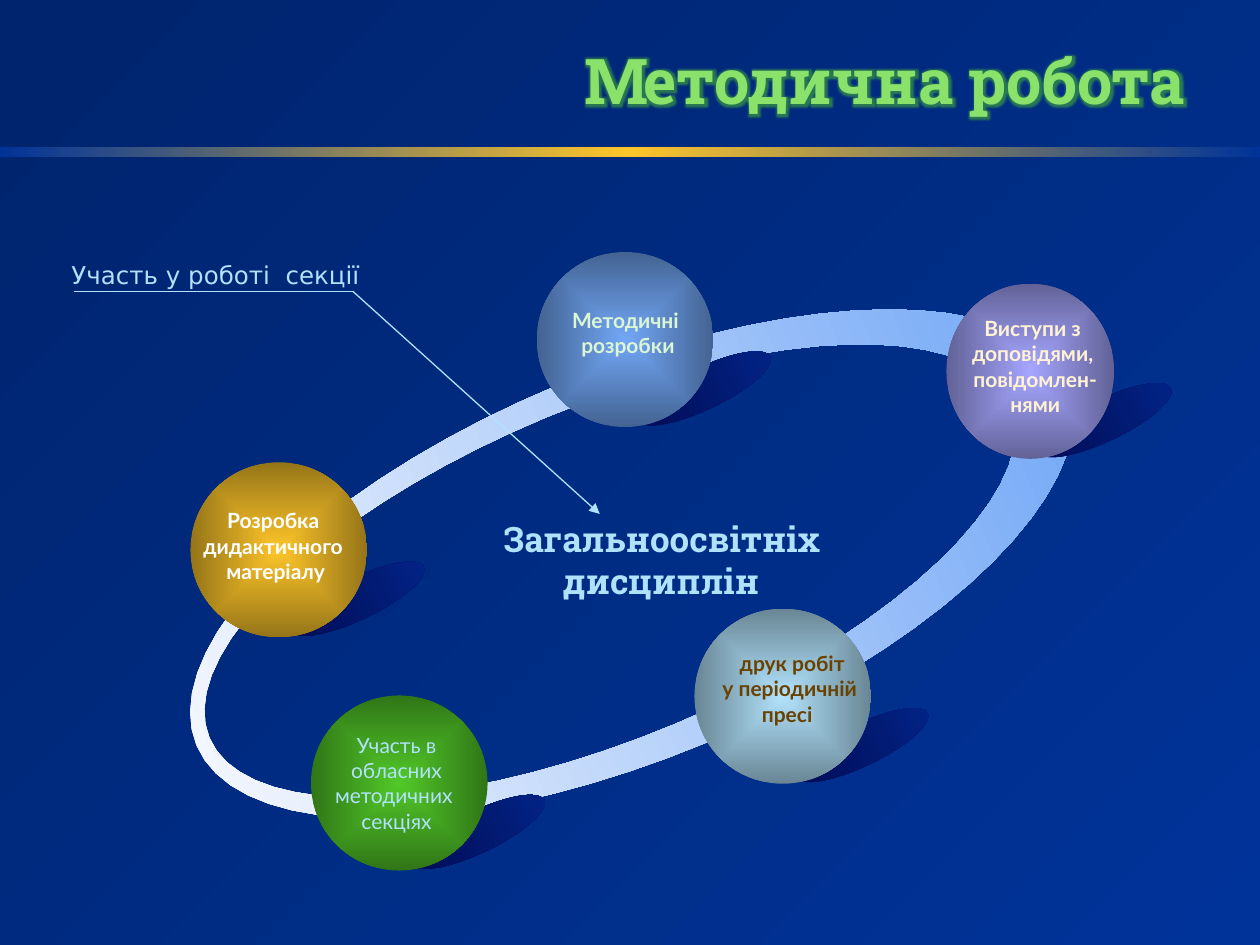
import math
from dataclasses import dataclass

import lxml.etree
import pptx
import pptx.dml.color
import pptx.enum.shapes
import pptx.enum.text
import pptx.oxml
import pptx.oxml.ns
import pptx.util

Cm = pptx.util.Cm
Pt = pptx.util.Pt
qn = pptx.oxml.ns.qn
RGB = pptx.dml.color.RGBColor.from_string
OVAL = pptx.enum.shapes.MSO_SHAPE.OVAL
RECTANGLE = pptx.enum.shapes.MSO_SHAPE.RECTANGLE
ALIGN = pptx.enum.text.PP_ALIGN
MIDDLE = pptx.enum.text.MSO_ANCHOR.MIDDLE


@dataclass(frozen=True)
class Theme:
    night: str = "00246D"
    blue: str = "003399"
    gold: str = "FDC529"
    green: str = "52C828"
    lime: str = "8AE26B"
    sky: str = "B1E2FB"
    azure: str = "72A7F6"
    violet: str = "A5A5FF"
    mist: str = "F6F8FE"
    shade_dark: str = "020A53"
    shade_light: str = "022589"
    white: str = "FFFFFF"
    mint: str = "DBF6D2"
    cream: str = "FFF3D4"
    brown: str = "694201"
    black: str = "000000"
    title_font: str = "Roboto Slab"
    label_font: str = "Lato"
    note_font: str = "DejaVu Sans"
    title_size: int = 36
    core_size: int = 20
    note_size: int = 14
    label_size: int = 12


@dataclass(frozen=True)
class Box:
    left: float
    top: float
    width: float
    height: float

    def area(self, left, top, width, height):
        return Box(self.left + left, self.top + top, width, height)

    def lengths(self):
        return [Cm(v) for v in (self.left, self.top, self.width, self.height)]


THEME = Theme()
SPHERES = [
    (Box(10.82, 5.08, 3.56, 3.53), THEME.azure, THEME.mint, True,
     (0.06, -0.14), ["Методичні ", "розробки"]),
    (Box(3.84, 9.32, 3.56, 3.53), THEME.gold, THEME.white, True,
     (-0.06, -0.08), ["Розробка ", "дидактичного ", "матеріалу"]),
    (Box(6.27, 14.02, 3.56, 3.53), THEME.green, THEME.sky, False,
     None, ["Участь в ", "обласних ", "методичних  ", "секціях "]),
    (Box(14, 12.27, 3.56, 3.53), THEME.sky, THEME.brown, True,
     (0.14, -0.15), [" друк робіт", " у періодичній ", "пресі "]),
    (Box(19.08, 5.72, 3.38, 3.53), THEME.violet, THEME.cream, True,
     (0.1, -0.1), ["Виступи з ", "доповідями, ", "повідомлен-", "нями"]),
]


def paint_gradient(fill, owner, colors, angle=0, edge_shade=None):
    fill.gradient()
    grad = owner.find(".//" + qn("a:gradFill"))
    grad.clear()
    grad.set("rotWithShape", "1")
    stops = lxml.etree.SubElement(grad, qn("a:gsLst"))
    for i, color in enumerate(colors):
        stop = lxml.etree.SubElement(stops, qn("a:gs"), pos=str(100000 * i // (len(colors) - 1)))
        tone = lxml.etree.SubElement(stop, qn("a:srgbClr"), val=color)
    if edge_shade:
        lxml.etree.SubElement(tone, qn("a:shade"), val=str(edge_shade))
        burst = lxml.etree.SubElement(grad, qn("a:path"), {"path": "shape"})
        lxml.etree.SubElement(burst, qn("a:fillToRect"), dict.fromkeys("ltrb", "50000"))
    else:
        lxml.etree.SubElement(grad, qn("a:lin"), ang=str(round(angle * 60000)), scaled="0")


def finish_shape(shape, colors, **options):
    shape.shadow.inherit = False
    shape.line.fill.background()
    paint_gradient(shape.fill, shape._element.spPr, colors, **options)


def write(frame, lines, font, size, color, bold=False, align=ALIGN.CENTER, wrap=False, anchor=None):
    frame.word_wrap = wrap
    if anchor is not None:
        frame.vertical_anchor = anchor
    for i, line in enumerate(lines):
        paragraph = frame.add_paragraph() if i else frame.paragraphs[0]
        paragraph.alignment = align
        run = paragraph.add_run()
        run.text = line
        run.font.name, run.font.size, run.font.bold = font, Pt(size), bold
        run.font.color.rgb = RGB(color)
    return run


def add_text_effect(run, kind, color, alpha=100, **settings):
    effects = pptx.oxml.parse_xml(f"<a:effectLst {pptx.oxml.ns.nsdecls('a')}/>")
    effect = lxml.etree.SubElement(effects, qn(kind), settings)
    tone = lxml.etree.SubElement(effect, qn("a:srgbClr"), val=color)
    lxml.etree.SubElement(tone, qn("a:alpha"), val=str(alpha * 1000))
    run.font._element.find(qn("a:solidFill")).addnext(effects)


def draw_heading(slide, box):
    divider = slide.shapes.add_shape(RECTANGLE, *box.area(0, 2.97, box.width, 0.2).lengths())
    finish_shape(divider, [THEME.blue, THEME.gold, THEME.blue])
    title = slide.shapes.add_textbox(*box.area(3.18, 0.81, 20.95, 1.57).lengths())
    run = write(title.text_frame, ["Методична робота"], THEME.title_font, THEME.title_size,
                THEME.lime, True, ALIGN.RIGHT, True, MIDDLE)
    add_text_effect(run, "a:glow", THEME.green, 50, rad=str(Pt(6)))


def ellipse_points(x, y, half_width, half_height, tilt, count=72):
    cos, sin = math.cos(math.radians(tilt)), math.sin(math.radians(tilt))
    for i in range(count):
        turn = math.tau * i / count
        across, down = half_width * math.cos(turn), half_height * math.sin(turn)
        yield Cm(x + across * cos - down * sin), Cm(y + across * sin + down * cos)


def draw_orbit(slide, box, tilt=-22.6):
    x, y = box.left + box.width / 2, box.top + box.height / 2
    half_width, half_height = box.width / 2, box.height / 2
    outer = list(ellipse_points(x, y, half_width, half_height, tilt))
    inner = list(ellipse_points(x - 0.44, y + 0.14, half_width * 0.92, half_height * 0.86, tilt))
    builder = slide.shapes.build_freeform(*outer[0])
    builder.add_line_segments(outer[1:], close=True)
    builder.move_to(*inner[0])
    builder.add_line_segments(inner[1:], close=True)
    finish_shape(builder.convert_to_shape(), [THEME.mist, THEME.azure], angle=360 + tilt)


def draw_sphere_shadow(slide, box):
    spot = box.area(box.width - 1.68, 2.33, 2.97, 0.84)
    shadow = slide.shapes.add_shape(OVAL, *spot.lengths())
    shadow.rotation = 334.3
    finish_shape(shadow, [THEME.shade_dark, THEME.shade_light])


def draw_sphere(slide, box, color, ink, bold, label_shift, lines):
    sphere = slide.shapes.add_shape(OVAL, *box.lengths())
    finish_shape(sphere, [color, color], edge_shade=30200)
    label = sphere
    if label_shift:
        dx, dy = label_shift
        height = 0.51 * len(lines) + 0.25
        spot = box.area(dx, (box.height - height) / 2 + dy, box.width, height)
        label = slide.shapes.add_textbox(*spot.lengths())
    write(label.text_frame, lines, THEME.label_font, THEME.label_size, ink, bold,
          anchor=None if label_shift else MIDDLE)


def draw_core(slide, box):
    core = slide.shapes.add_textbox(*box.lengths())
    run = write(core.text_frame, ["Загальноосвітніх дисциплін"], THEME.title_font,
                THEME.core_size, THEME.sky, True, wrap=True)
    add_text_effect(run, "a:outerShdw", THEME.black, dist=str(Pt(2.5)), dir="2700000")


def draw_callout(slide, box):
    corner = (box.left + 5.92, box.top + 0.76)
    ends = [((box.left + box.width, box.top + box.height), True),
            ((box.left + 0.31, corner[1]), False)]
    for end, arrow in ends:
        leader = slide.shapes.add_connector(
            pptx.enum.shapes.MSO_CONNECTOR.STRAIGHT, *[Cm(v) for v in corner + end])
        leader.line.color.rgb = RGB(THEME.sky)
        leader.line.width = Pt(0.75)
        outline = leader._element.spPr
        if arrow:
            lxml.etree.SubElement(outline.find(qn("a:ln")), qn("a:tailEnd"), type="triangle")
        lxml.etree.SubElement(outline, qn("a:effectLst"))
    note = slide.shapes.add_textbox(*box.area(0, 0, 6.45, 0.86).lengths())
    write(note.text_frame, ["Участь у роботі  секції"], THEME.note_font, THEME.note_size,
          THEME.sky, align=ALIGN.LEFT)


def main():
    deck = pptx.Presentation()
    deck.slide_width, deck.slide_height = Cm(25.4), Cm(19.05)
    slide = deck.slides.add_slide(deck.slide_layouts[6])
    paint_gradient(slide.background.fill, slide._element, [THEME.night, THEME.blue], angle=45)
    draw_heading(slide, Box(0, 0, 25.4, 3.17))
    draw_orbit(slide, Box(3.23, 7.47, 19.02, 7.8))
    for sphere in SPHERES:
        draw_sphere_shadow(slide, sphere[0])
    for sphere in SPHERES:
        draw_sphere(slide, *sphere)
    draw_core(slide, Box(9.73, 10.31, 7.19, 1.96))
    draw_callout(slide, Box(1.19, 5.11, 10.9, 5.25))
    deck.save("out.pptx")


if __name__ == "__main__":
    main()
